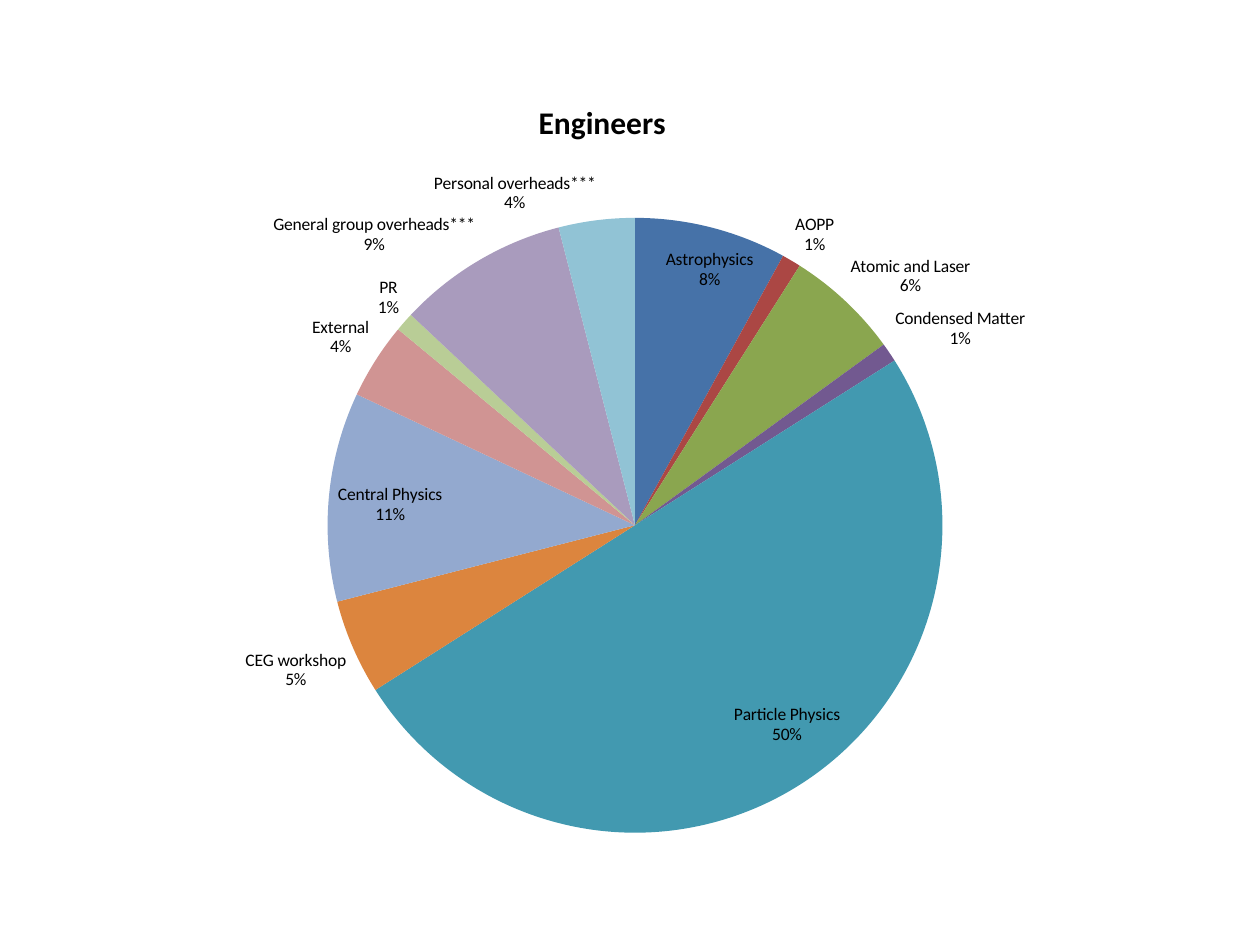
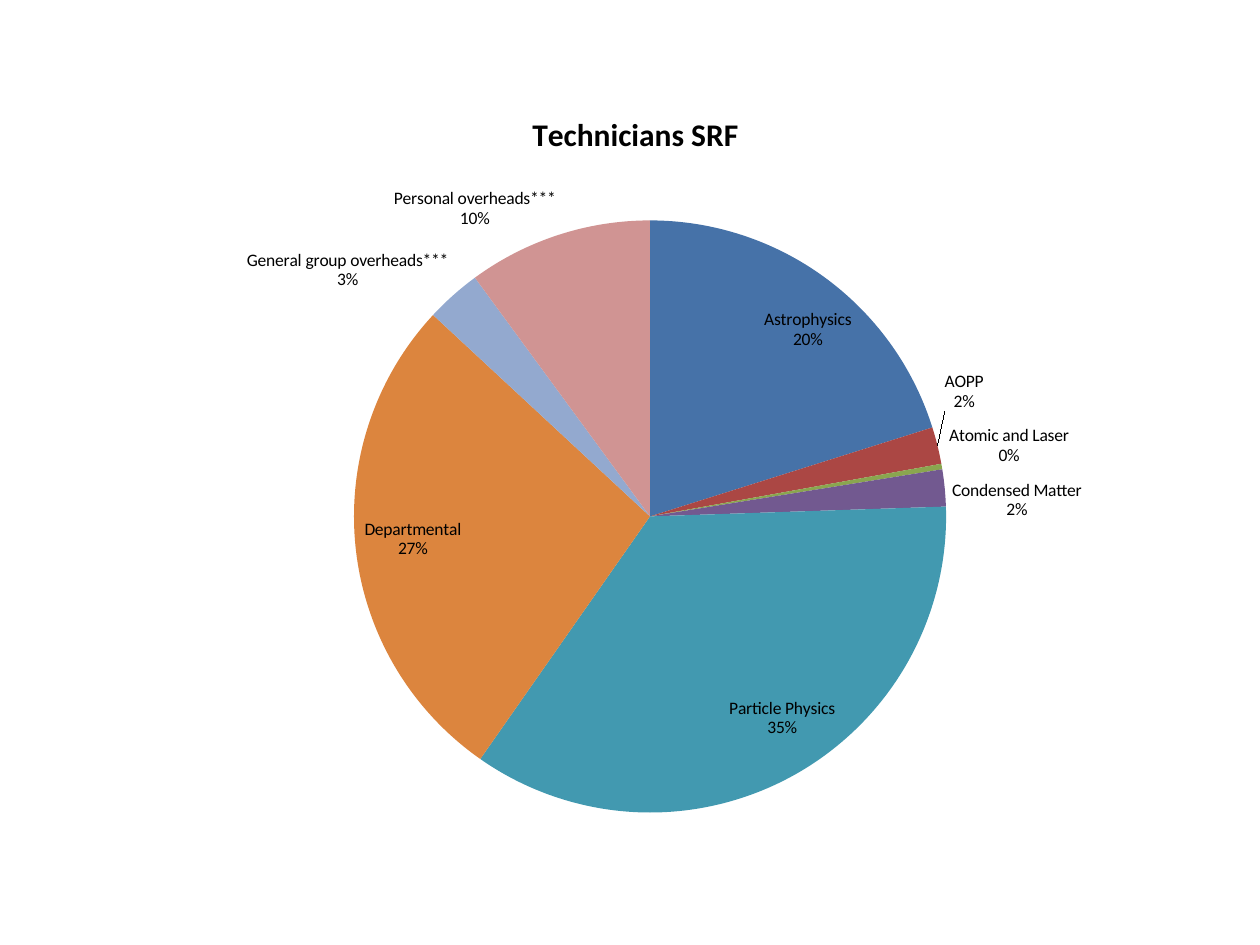
import pptx
import pptx.chart.data
import pptx.dml.color
import pptx.enum.chart
import pptx.oxml
import pptx.oxml.ns
import pptx.util
from pptx.util import Inches

SHADES = ["4672A8", "AB4744", "8AA64F", "725990", "4299B0", "DC853E",
          "93A9CF", "D09493", "B9CD96", "A99BBD", "91C3D5"]
GROUPS = ["Astrophysics", "AOPP", "Atomic and Laser", "Condensed Matter",
          "Particle Physics"]
COSTS = ["General group overheads***", "Personal overheads***"]


def color(code):
    return pptx.dml.color.RGBColor.from_string(code)


def element(tag, **attrs):
    node = pptx.oxml.parse_xml(f"<c:{tag} {pptx.oxml.ns.nsdecls('c')}/>")
    for name, value in attrs.items():
        node.set(name, str(value))
    return node


class Deck:
    font = "Calibri"
    ink = "000000"

    def __init__(self):
        self.prs = pptx.Presentation()
        self.prs.slide_width = Inches(10)
        self.prs.slide_height = Inches(7.5)
        self.slide = None

    def page(self):
        self.slide = self.prs.slides.add_slide(self.prs.slide_layouts[6])

    def style(self, font, size, bold):
        font.name = self.font
        font.size = pptx.util.Pt(size)
        font.bold = bold
        font.color.rgb = color(self.ink)

    def place(self, parent, box, **spots):
        for old in parent.findall(pptx.oxml.ns.qn("c:layout")):
            parent.remove(old)
        left, top, width, height = box
        scale = {"x": (left, width), "y": (top, height),
                 "w": (0, width), "h": (0, height)}
        layout, manual = element("layout"), element("manualLayout")
        layout.append(manual)
        if "w" in spots:
            manual.append(element("layoutTarget", val="inner"))
        for side in "xy":
            manual.append(element(side + "Mode", val="edge"))
        for key, value in spots.items():
            start, span = scale[key]
            manual.append(element(key, val=round((value - start) / span, 4)))
        return layout

    def pie(self, title, names, values, box, head, disc):
        data = pptx.chart.data.CategoryChartData()
        data.categories = names
        data.add_series("Series 1", values)
        frame = self.slide.shapes.add_chart(
            pptx.enum.chart.XL_CHART_TYPE.PIE, *map(Inches, box), data)
        chart = frame.chart
        chart.has_legend = False
        self.style(chart.font, 10, False)
        self.title(chart, title, box, head)

        left, top, size = disc
        area = chart.plots[0]._element.getparent()
        area.insert(0, self.place(area, box, x=left, y=top, w=size, h=size))

        series = chart.plots[0].series[0]
        for index in range(len(values)):
            fill = series.points[index].format.fill
            fill.solid()
            fill.fore_color.rgb = color(SHADES[index])
        self.labels(series.data_labels)

    def title(self, chart, text, box, head):
        chart.has_title = True
        title = chart.chart_title
        title.include_in_layout = False
        title.text_frame.text = text
        self.style(title.text_frame.paragraphs[0].runs[0].font, 18, True)
        left, top = head
        layout = self.place(title._element, box, x=left, y=top)
        title._element.find(pptx.oxml.ns.qn("c:tx")).addnext(layout)

    def labels(self, labels):
        labels.show_value = False
        labels.show_category_name = True
        labels.show_percentage = True
        labels.number_format = "0%"
        labels.number_format_is_linked = False
        labels.position = pptx.enum.chart.XL_LABEL_POSITION.BEST_FIT
        self.style(labels.font, 10, False)
        breaker = element("separator")
        breaker.text = "\n"
        last = labels._element.find(pptx.oxml.ns.qn("c:showBubbleSize"))
        last.addnext(breaker)


def main():
    deck = Deck()
    deck.page()
    deck.pie("Engineers",
             GROUPS + ["CEG workshop", "Central Physics", "External", "PR"] + COSTS,
             [8, 1, 6, 1, 50, 5, 11, 4, 1, 9, 4],
             box=(0.51, 0.6, 8.82, 6.14), head=(4.23, 0.75),
             disc=(2.6, 1.73, 4.88))
    deck.page()
    deck.pie("Technicians SRF", GROUPS + ["Departmental"] + COSTS,
             [20, 2, 0.3, 2, 35, 27, 3, 10],
             box=(0.91, 0.68, 8.27, 5.91), head=(4.18, 0.85),
             disc=(2.81, 1.75, 4.7))
    deck.prs.save("out.pptx")


if __name__ == "__main__":
    main()
